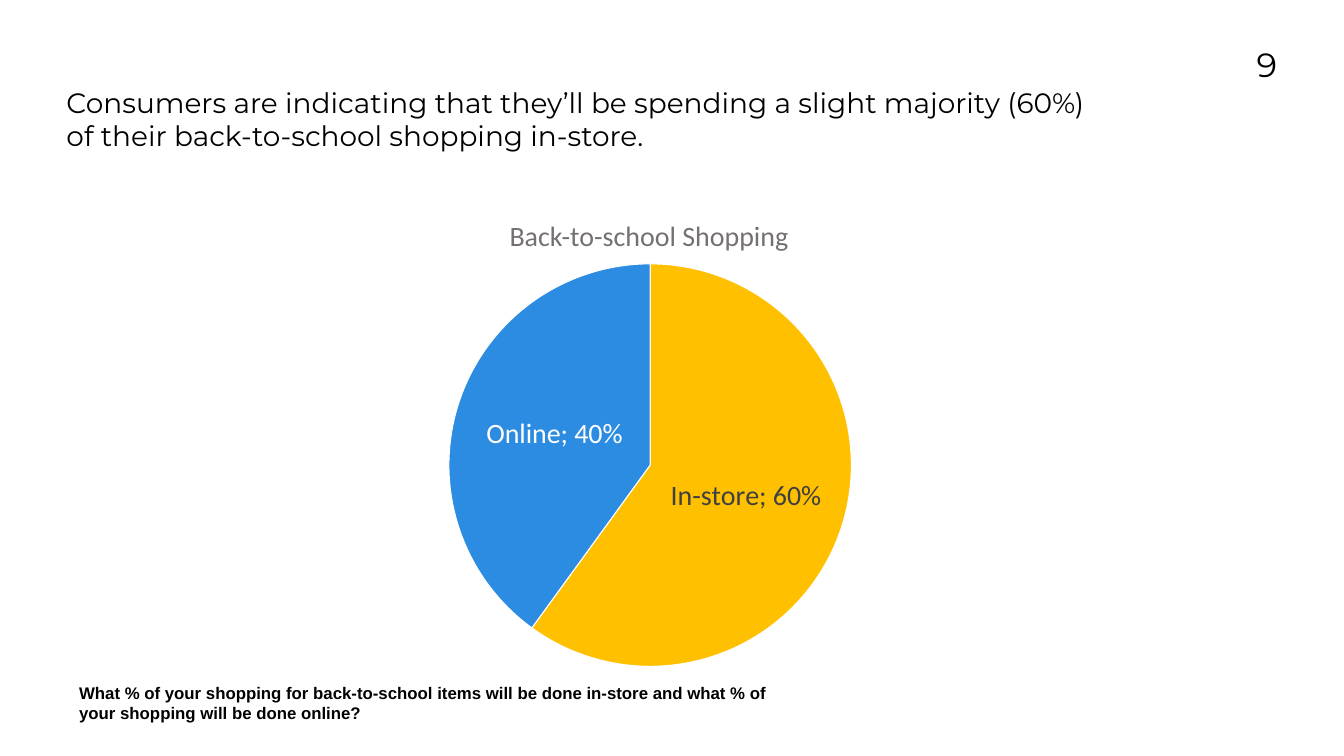
from lxml import etree
from pptx import Presentation
from pptx.chart.data import CategoryChartData
from pptx.dml.color import RGBColor
from pptx.enum.chart import XL_CHART_TYPE, XL_LABEL_POSITION
from pptx.enum.text import MSO_ANCHOR, MSO_AUTO_SIZE, PP_ALIGN
from pptx.oxml import parse_xml
from pptx.oxml.ns import nsdecls, qn
from pptx.util import Pt

LEFT, CENTER, RIGHT = PP_ALIGN.LEFT, PP_ALIGN.CENTER, PP_ALIGN.RIGHT
TOP, NO_FIT = MSO_ANCHOR.TOP, MSO_AUTO_SIZE.NONE
PIE = XL_CHART_TYPE.PIE
LABEL_CENTER = XL_LABEL_POSITION.CENTER

# Content
TITLE = ("Consumers are indicating that they’ll be spending a slight majority (60%) "
         "of their back-to-school shopping in-store.")
QUESTION = ("What % of your shopping for back-to-school items will be done in-store "
            "and what % of your shopping will be done online?")
CHART_TITLE = "Back-to-school Shopping"
PAGE_NUMBER = "9"
SLICES = [  # category, share, fill, label colour
    ("In-store", 0.6, "FFC000", "404040"),
    ("Online", 0.4, "2B8CE1", "FFFFFF"),
]

# Layout, in points
SLIDE_W, SLIDE_H = 1920, 1080
MARGIN = 95
INDENT = 18
CHART_W, CHART_H = 828, 596
PIE_SIZE = 575


def color(value):
    return RGBColor.from_string(value)


def style_font(font, size, name, value, bold=False):
    font.size, font.name, font.bold = Pt(size), name, bold
    font.color.rgb = color(value)


def put_text(sp, box, text, size, name, value="000000", align=LEFT, bold=False):
    sp.left, sp.top, sp.width, sp.height = map(Pt, box)
    tf = sp.text_frame
    tf.margin_left = tf.margin_right = tf.margin_top = tf.margin_bottom = 0
    tf.word_wrap = True
    tf.auto_size = NO_FIT
    tf.vertical_anchor = TOP
    p = tf.paragraphs[0]
    p.text = text
    p.alignment = align
    style_font(p.font, size, name, value, bold)


prs = Presentation()
prs.slide_width, prs.slide_height = Pt(SLIDE_W), Pt(SLIDE_H)
s = prs.slides.add_slide(prs.slide_layouts[5])


def add_text(box, *args, **kwargs):
    put_text(s.shapes.add_textbox(0, 0, 0, 0), box, *args, **kwargs)


# Title, page number, survey question and chart heading
put_text(s.shapes.title, (MARGIN, 121.7, 1482.5, 150), TITLE, 40, "Montserrat")
add_text((1662.5, 63.4, 162, 118), PAGE_NUMBER, 48, "Montserrat", align=RIGHT)
add_text((MARGIN + INDENT, 975.6, 1008 - INDENT, 47), QUESTION, 24, "Arial", bold=True)
add_text((720, 311.8, 414, 48), CHART_TITLE, 40, "Calibri", "767171", CENTER)

# Pie chart
data = CategoryChartData(number_format="0%")
data.categories = [category for category, *_ in SLICES]
data.add_series("Series 1", [share for _, share, *_ in SLICES])
chart = s.shapes.add_chart(PIE, Pt(514.8), Pt(366.5), Pt(CHART_W), Pt(CHART_H), data).chart
chart.has_title = chart.has_legend = False
style_font(chart.font, 10, "Calibri", "000000")
plot = chart.plots[0]
plot.vary_by_categories = True
series = plot.series[0]

# Labels and slices
labels = series.data_labels
labels.show_value = labels.show_category_name = True
labels.number_format, labels.number_format_is_linked = "0%", False
labels.position = LABEL_CENTER
style_font(labels.font, 40, "Calibri", SLICES[0][3])
for i, (_, _, fill, label_color) in enumerate(SLICES):
    point = series.points[i]
    point.format.fill.solid()
    point.format.fill.fore_color.rgb = color(fill)
    point.format.line.color.rgb = color("FFFFFF")
    point.format.line.width = Pt(1.5)
    label = point.data_label
    style_font(label.font, 40, "Calibri", label_color)
    label.position = LABEL_CENTER

# Category names and separator on every label
chart_xml = chart._chartSpace
for flag in chart_xml.iter(qn("c:showCatName")):
    flag.set("val", "1")
for flag in list(chart_xml.iter(qn("c:showBubbleSize"))):
    separator = etree.Element(qn("c:separator"))
    separator.text = "; "
    flag.addnext(separator)

# Pie centred in the chart frame
w, h = PIE_SIZE / CHART_W, PIE_SIZE / CHART_H
area = chart_xml.find(".//" + qn("c:plotArea"))
for old in area.findall(qn("c:layout")):
    area.remove(old)
area.insert(0, parse_xml(
    f'<c:layout {nsdecls("c")}><c:manualLayout><c:layoutTarget val="inner"/>'
    f'<c:xMode val="edge"/><c:yMode val="edge"/>'
    f'<c:x val="{(1 - w) / 2:.4f}"/><c:y val="{(1 - h) / 2:.4f}"/>'
    f'<c:w val="{w:.4f}"/><c:h val="{h:.4f}"/></c:manualLayout></c:layout>'))

prs.save("out.pptx")
